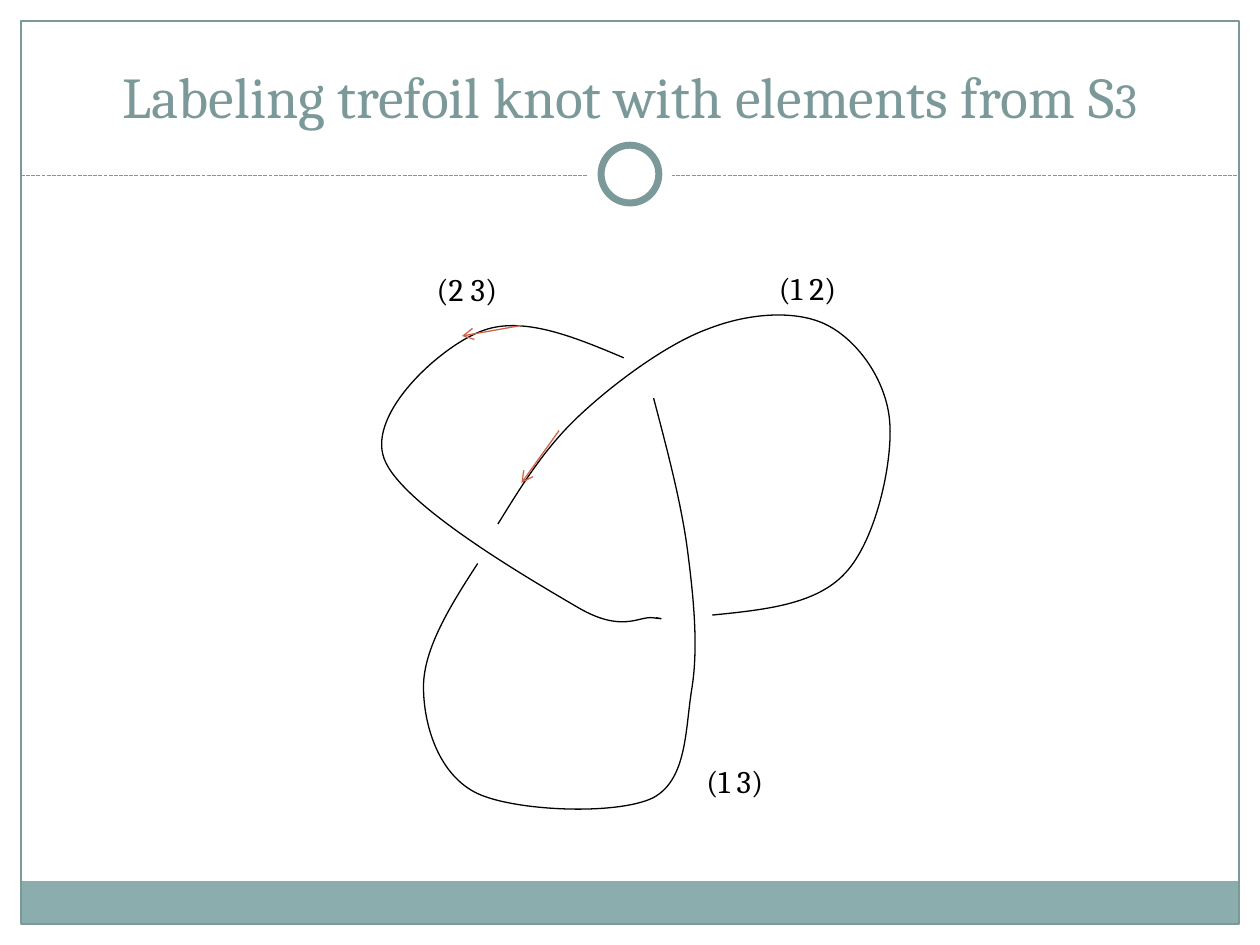
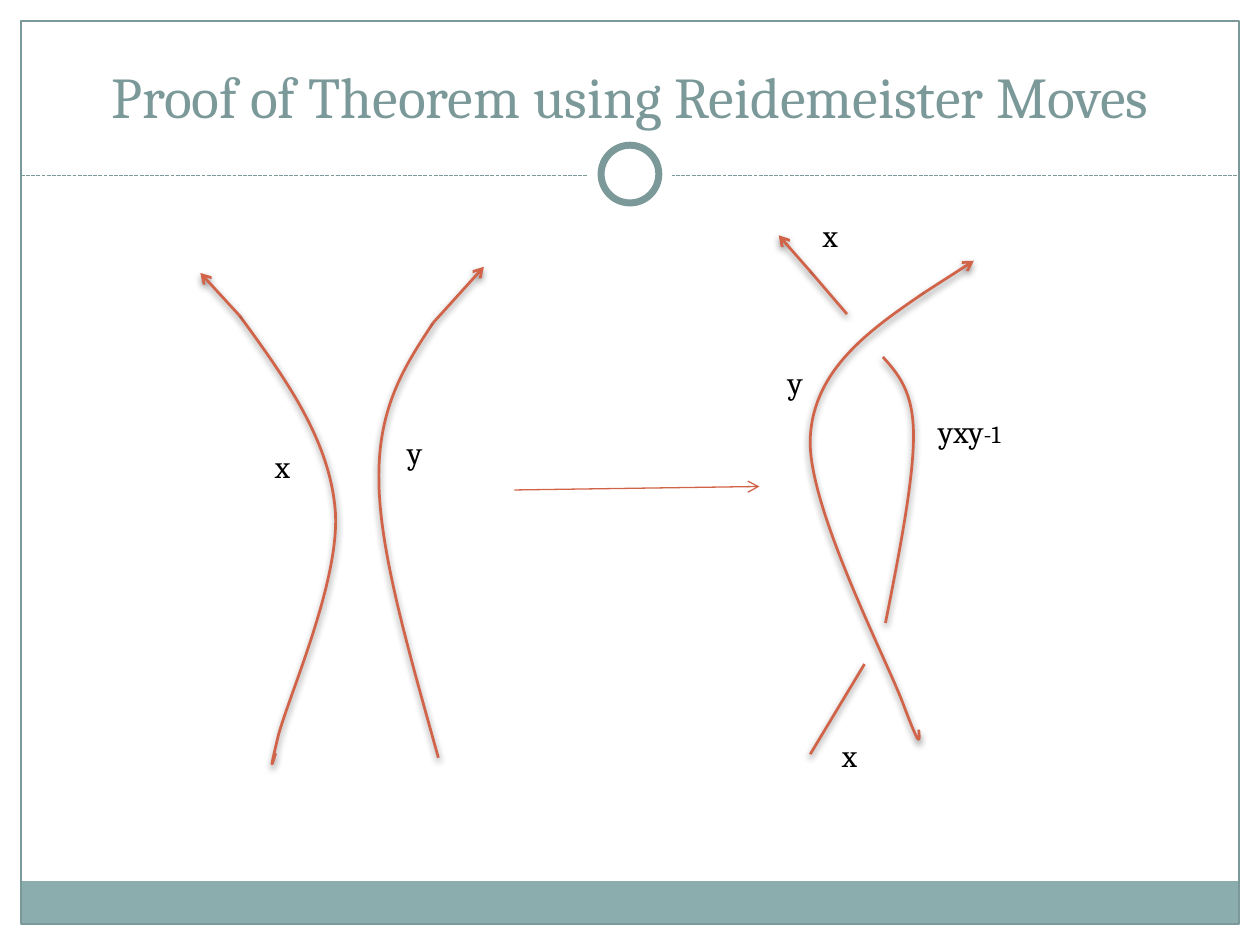
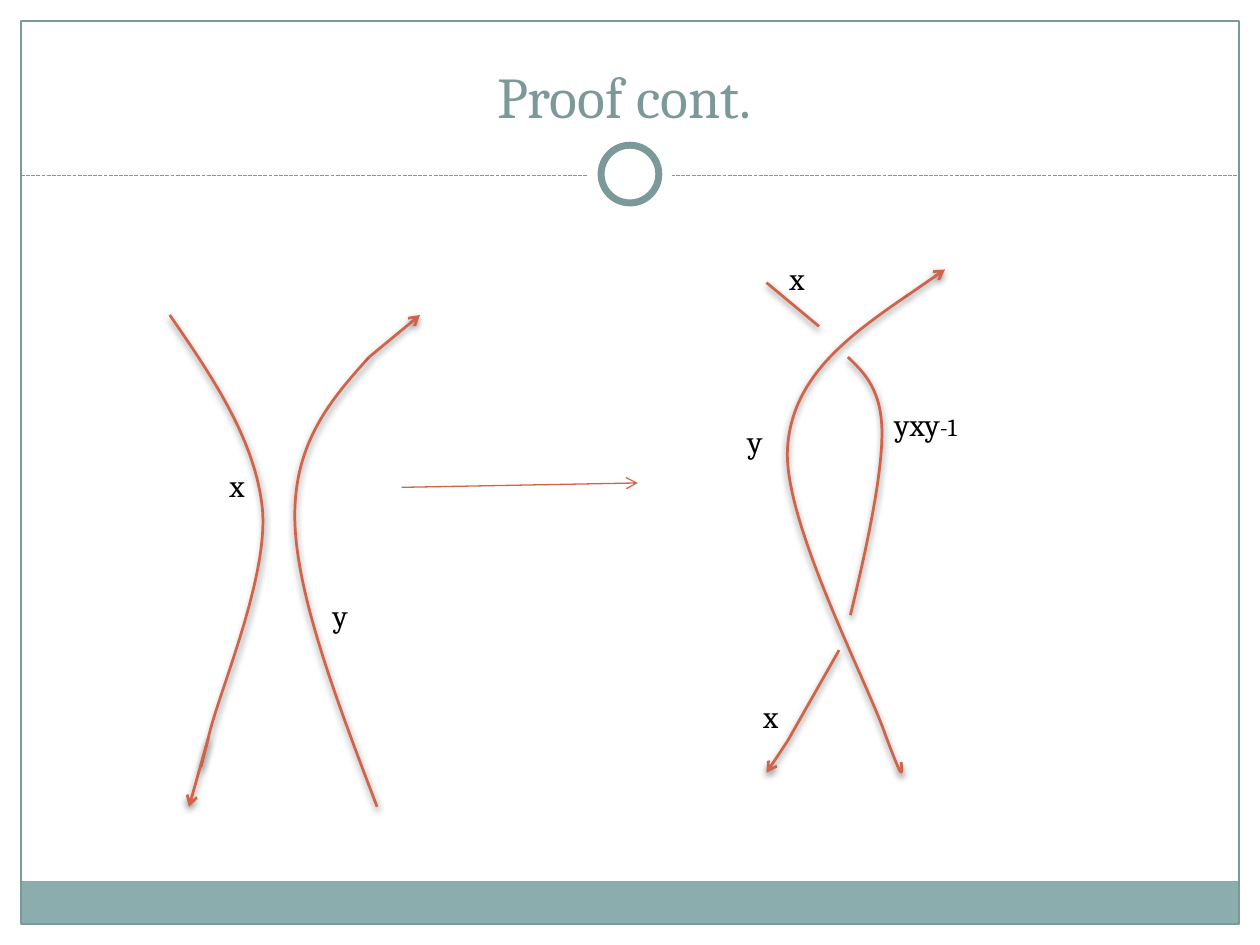
import dataclasses

import pptx
import pptx.dml.color
import pptx.enum.dml
import pptx.enum.shapes
import pptx.enum.text
import pptx.oxml
import pptx.oxml.ns
import pptx.util
from lxml import etree

Pt = pptx.util.Pt
RGBColor = pptx.dml.color.RGBColor
qn = pptx.oxml.ns.qn
SHAPE = pptx.enum.shapes.MSO_SHAPE


@dataclasses.dataclass(frozen=True)
class Theme:
    """Colours, font, type sizes and line widths of the deck."""
    font: str = "Cambria"
    white: RGBColor = RGBColor(0xFF, 0xFF, 0xFF)
    black: RGBColor = RGBColor(0x00, 0x00, 0x00)
    slate: RGBColor = RGBColor(0x7C, 0x99, 0x9A)
    band: RGBColor = RGBColor(0x8C, 0xAD, 0xAE)
    rust: RGBColor = RGBColor(0xD1, 0x63, 0x49)
    title_size: float = 33
    title_tail_size: float = 28
    label_size: float = 18
    label_tail_size: float = 14
    thin: float = 0.75
    strand: float = 1.57
    ring: float = 4


THEME = Theme()

KNOT_ARCS = [
    [(356.5, 204.5), (327, 192), (297.5, 180), (274.5, 189.5),
     (251.5, 198.5), (210, 236), (219.5, 262),
     (229, 288.5), (304.5, 332), (330, 347),
     (355.5, 362), (365, 352), (373, 353),
     (380, 354), (378, 353.5), (375, 353)],
    [(407, 351.5), (437, 348.5), (466.5, 345.5), (483, 327.5),
     (500.5, 309), (510, 265), (508.5, 242),
     (507, 218), (490.5, 195), (473, 186),
     (456, 177), (428.5, 178.5), (404.5, 188),
     (381, 196.5), (350, 219.5), (330, 238.5),
     (310.5, 257), (297.5, 278.5), (284.5, 299.5)],
    [(273, 322), (257, 346.5), (242, 371), (242, 392.5),
     (242, 414), (250.5, 443), (273, 453.5),
     (294.5, 463.5), (352, 466), (373, 456),
     (393, 445.5), (391.5, 416), (395.5, 392.5),
     (399, 369.5), (396.5, 342.5), (393, 315.5),
     (389.5, 288), (381.5, 258), (373.5, 227.5)],
]
KNOT_ARROWS = [((319.5, 246), (298, 276)), ((298, 186), (264, 192))]
KNOT_LABELS = [("(1 2)", 438, 150, 60), ("(2 3)", 242.5, 151, 56),
               ("(1 3)", 396.5, 432, 54)]


@dataclasses.dataclass(frozen=True)
class Move:
    """Strands, arrows and labels of one Reidemeister move."""
    title: str
    curves: list
    segments: list
    arrows: list
    becomes: tuple
    labels: list


PARALLEL_MOVE = Move(
    title="Proof of Theorem using Reidemeister Moves",
    curves=[
        [(528.5, 167), (497, 188.5), (465, 211), (463, 250),
         (461, 288.5), (505.5, 374.5), (516, 402),
         (526.5, 430), (525.5, 423.5), (525, 417)],
        [(504.5, 204), (513.5, 214), (522, 224), (522, 249),
         (522, 274.5), (514, 315.5), (506, 356)],
        [(137, 180.5), (162.5, 215.5), (188, 250.5), (191.5, 291),
         (195, 330.5), (165, 397.5), (159, 420.5),
         (153.5, 443.5), (155.5, 437), (157.5, 430.5)],
        [(247.5, 184.5), (232, 208), (216, 232), (216.5, 273.5),
         (216.5, 314.5), (234, 373.5), (250.5, 433)],
    ],
    segments=[((463, 155), (484, 179.5)), ((494, 379.5), (463, 431))],
    arrows=[((528.5, 167), (556.5, 149)), ((463, 155), (445, 134.5)),
            ((247.5, 184.5), (276.5, 152.5)), ((137, 180.5), (114.5, 156))],
    becomes=((294, 280), (434, 278)),
    labels=[("x", 150, 252, 30), ("y", 225.5, 244, 17.5),
            ("y", 443, 204, 20), ("x", 463, 120, 32.5),
            ("x", 474, 417, 25), ("yxy", 529, 232, 64, "-1")],
)

OPPOSITE_MOVE = Move(
    title="Proof cont. ",
    curves=[
        [(519, 168.5), (485.5, 191.5), (452, 215.5), (450, 257),
         (448, 299), (495.5, 389.5), (506, 420),
         (517, 449.5), (515.5, 442), (515, 435.5)],
        [(484.5, 204), (494, 213), (504, 223), (504, 247.5),
         (504, 272), (495.5, 312), (486, 351.5)],
        [(97, 180), (121.5, 215.5), (146, 251.5), (150, 291),
         (153.5, 331), (124, 398), (119, 422),
         (113, 445), (115, 438.5), (116.5, 431.5)],
        [(211, 204), (189.5, 228), (168, 252.5), (168.5, 296),
         (169, 338.5), (192, 399.5), (215.5, 461)],
    ],
    segments=[((438, 161.5), (468, 186.5)), ((479.5, 371.5), (450, 423.5))],
    arrows=[((519, 168.5), (540, 154)), ((211, 204), (240, 180)),
            ((450, 423.5), (438, 441.5)), ((119, 422), (108, 461))],
    becomes=((229.5, 278.5), (364.5, 276)),
    labels=[("x", 124, 263, 26.5), ("y", 183, 337, 18),
            ("y", 420, 237.5, 24), ("x", 444, 144.5, 26.5),
            ("x", 429, 394.5, 18), ("yxy", 504, 228, 58.5, "-1")],
)


def style_stroke(shape, color, width, arrow=False, shadow=False, dash=None):
    """Set line, optional arrowhead and optional soft shadow."""
    shape.line.color.rgb = color
    shape.line.width = Pt(width)
    if dash is not None:
        shape.line.dash_style = dash
    properties = shape.element.spPr
    if arrow:
        etree.SubElement(properties.find(qn("a:ln")), qn("a:tailEnd"), type="arrow")
    effects = etree.SubElement(properties, qn("a:effectLst"))
    if shadow:
        cast = etree.SubElement(effects, qn("a:outerShdw"), blurRad=str(Pt(4)),
                                dist=str(Pt(2)), dir="5400000", rotWithShape="0")
        black = etree.SubElement(cast, qn("a:srgbClr"), val=str(THEME.black))
        etree.SubElement(black, qn("a:alpha"), val="45000")


def draw_line(page, start, end, color, width, **stroke):
    """Draw a straight line between two points."""
    line = page.shapes.add_connector(
        pptx.enum.shapes.MSO_CONNECTOR.STRAIGHT, *map(Pt, start + end))
    style_stroke(line, color, width, **stroke)
    return line


def bezier_point(corners, t):
    """Return the point at parameter t of a cubic curve."""
    weights = ((1 - t) ** 3, 3 * t * (1 - t) ** 2, 3 * t * t * (1 - t), t ** 3)
    return tuple(sum(weight * corner[axis] for weight, corner in zip(weights, corners))
                 for axis in (0, 1))


def draw_curve(page, points, color, width, **stroke):
    """Draw an open chain of cubic curves framed by its true extent."""
    points = [(Pt(x), Pt(y)) for x, y in points]
    starts = range(0, len(points) - 1, 3)
    trace = [bezier_point(points[first:first + 4], step / 20)
             for first in starts for step in range(1, 21)]
    builder = page.shapes.build_freeform(*points[0], scale=1.0)
    builder.add_line_segments(trace, close=False)
    curve = builder.convert_to_shape()
    outline = curve.element.find(".//" + qn("a:path"))
    for side in outline.findall(qn("a:lnTo")):
        outline.remove(side)
    for first in starts:
        bend = etree.SubElement(outline, qn("a:cubicBezTo"))
        for x, y in points[first + 1:first + 4]:
            etree.SubElement(bend, qn("a:pt"),
                             x=str(x - curve.left), y=str(y - curve.top))
    curve.fill.background()
    style_stroke(curve, color, width, **stroke)


def add_plain_shape(page, kind, left, top, width, height, fill=None, line=None, weight=0):
    """Add a preset shape with the given fill and line, or without them."""
    shape = page.shapes.add_shape(kind, *map(Pt, (left, top, width, height)))
    shape.shadow.inherit = False
    if fill is None:
        shape.fill.background()
    else:
        shape.fill.solid()
        shape.fill.fore_color.rgb = fill
    if line is None:
        shape.line.fill.background()
    else:
        shape.line.color.rgb = line
        shape.line.width = Pt(weight)
    return shape


def write(para, text, tail, sizes, color):
    """Fill a paragraph with text and an optional smaller tail."""
    para.text = text
    if tail:
        para.add_run().text = tail
    for span, size in zip(para.runs, sizes):
        span.font.name = THEME.font
        span.font.size = Pt(size)
        span.font.color.rgb = color


def add_label(page, text, left, top, width, tail=""):
    """Add a strand label."""
    box = page.shapes.add_textbox(Pt(left), Pt(top), Pt(width), Pt(29))
    frame = box.text_frame
    frame.word_wrap = True
    frame.auto_size = pptx.enum.text.MSO_AUTO_SIZE.SHAPE_TO_FIT_TEXT
    write(frame.paragraphs[0], text, tail,
          (THEME.label_size, THEME.label_tail_size), THEME.black)


def set_title(page, text, tail=""):
    """Place and format the title placeholder."""
    title = page.shapes.title
    title.left, title.top, title.width, title.height = map(Pt, (24, 18, 672, 60))
    frame = title.text_frame
    frame.word_wrap = True
    frame.auto_size = pptx.enum.text.MSO_AUTO_SIZE.NONE
    frame.vertical_anchor = pptx.enum.text.MSO_ANCHOR.BOTTOM
    para = frame.paragraphs[0]
    para.alignment = pptx.enum.text.PP_ALIGN.CENTER
    write(para, text, tail, (THEME.title_size, THEME.title_tail_size), THEME.slate)


def decorate_layout(layout, page):
    """Give the layout its band, frame, divider and ring."""
    for spare in list(layout.placeholders)[1:]:
        spare.element.getparent().remove(spare.element)
    ornaments = [
        add_plain_shape(page, SHAPE.RECTANGLE, 12, 503.5, 695.5, 24.5, fill=THEME.band),
        add_plain_shape(page, SHAPE.RECTANGLE, 12, 12, 696, 516,
                        line=THEME.slate, weight=THEME.thin),
        draw_line(page, (12, 100.5), (708, 100.5), THEME.slate, THEME.thin,
                  dash=pptx.enum.dml.MSO_LINE.SQUARE_DOT),
        add_plain_shape(page, SHAPE.OVAL, 336, 75.5, 48, 48, fill=THEME.white),
        add_plain_shape(page, SHAPE.OVAL, 343.5, 83, 33, 33, fill=THEME.white,
                        line=THEME.slate, weight=THEME.ring),
    ]
    for ornament in ornaments:
        layout.shapes.element.append(ornament.element)


def fill_knot_page(page):
    """Draw the labelled trefoil knot."""
    set_title(page, "Labeling trefoil knot with elements from S", "3")
    for arc in KNOT_ARCS:
        draw_curve(page, arc, THEME.black, THEME.thin)
    for start, end in KNOT_ARROWS:
        draw_line(page, start, end, THEME.rust, THEME.thin, arrow=True)
    for label in KNOT_LABELS:
        add_label(page, *label)


def fill_move_page(page, move):
    """Draw two strands before and after a Reidemeister move."""
    set_title(page, move.title)
    draw_line(page, *move.becomes, THEME.rust, THEME.thin, arrow=True)
    for curve in move.curves:
        draw_curve(page, curve, THEME.rust, THEME.strand, shadow=True)
    for start, end in move.segments:
        draw_line(page, start, end, THEME.rust, THEME.strand, shadow=True)
    for start, end in move.arrows:
        draw_line(page, start, end, THEME.rust, THEME.strand, arrow=True, shadow=True)
    for label in move.labels:
        add_label(page, *label)


def main():
    """Build and save the deck."""
    deck = pptx.Presentation()
    deck.slide_width, deck.slide_height = Pt(720), Pt(540)
    layout = deck.slide_layouts.get_by_name("Title Only")
    knot_page, *move_pages = [deck.slides.add_slide(layout) for _ in range(3)]
    decorate_layout(layout, knot_page)
    fill_knot_page(knot_page)
    for page, move in zip(move_pages, (PARALLEL_MOVE, OPPOSITE_MOVE)):
        fill_move_page(page, move)
    deck.save("out.pptx")


if __name__ == "__main__":
    main()
